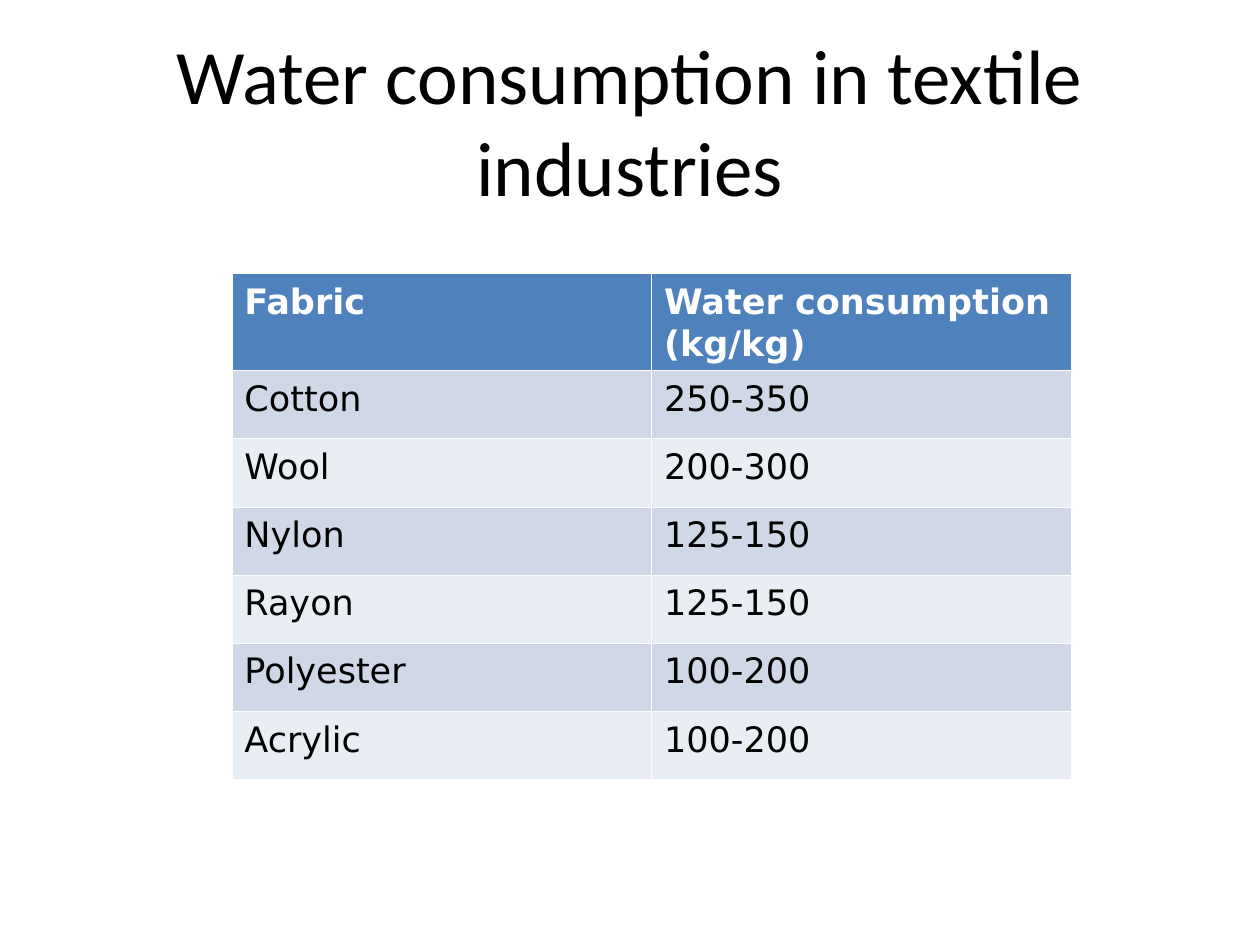
from dataclasses import dataclass

from lxml.etree import SubElement
from pptx import Presentation
from pptx.dml.color import RGBColor
from pptx.enum.text import PP_ALIGN
from pptx.oxml.ns import qn
from pptx.util import Inches, Pt


@dataclass(frozen=True)
class Theme:
    head_font: str = "Calibri"
    body_font: str = "DejaVu Sans"
    head_size: float = 44
    body_size: float = 20
    head_lead: float = 52.5
    body_lead: float = 24.3
    black: str = "000000"
    white: str = "FFFFFF"
    blue: str = "4F81BD"
    bands: tuple = ("D0D8E8", "E9EDF4")


THEME = Theme()
TITLE = "Water consumption in textile\vindustries"
ROWS = [
    ("Fabric", "Water consumption (kg/kg)"),
    ("Cotton", "250-350"),
    ("Wool", "200-300"),
    ("Nylon", "125-150"),
    ("Rayon", "125-150"),
    ("Polyester", "100-200"),
    ("Acrylic", "100-200"),
]


def style(para, font, size, lead, color, bold=False):
    para.line_spacing = Pt(lead)
    for run in para.runs:
        run.font.name = font
        run.font.size = Pt(size)
        run.font.bold = bold
        run.font.color.rgb = RGBColor.from_string(color)


def add_title(slide, left, top, width, height):
    box = slide.shapes.add_textbox(left, top, width, height)
    frame = box.text_frame
    frame.word_wrap = True
    frame.margin_left = frame.margin_right = 0
    frame.margin_top = frame.margin_bottom = 0
    frame.text = TITLE
    para = frame.paragraphs[0]
    para.alignment = PP_ALIGN.CENTER
    style(para, THEME.head_font, THEME.head_size, THEME.head_lead, THEME.black)


def add_edges(cell):
    """Draw a thin white line on all four sides of the cell."""
    props = cell._tc.get_or_add_tcPr()
    for side in ("a:lnL", "a:lnR", "a:lnT", "a:lnB"):
        line = SubElement(props, qn(side), w=str(Pt(0.25)))
        fill = SubElement(line, qn("a:solidFill"))
        SubElement(fill, qn("a:srgbClr"), val=THEME.white)


def fill_cell(cell, text, row):
    head = row == 0
    cell.margin_left = Inches(0.1)
    cell.margin_top = Inches(0.05)
    cell.margin_right = cell.margin_bottom = 0
    add_edges(cell)
    cell.fill.solid()
    color = THEME.blue if head else THEME.bands[(row - 1) % 2]
    cell.fill.fore_color.rgb = RGBColor.from_string(color)
    cell.text_frame.text = text
    style(cell.text_frame.paragraphs[0], THEME.body_font, THEME.body_size,
          THEME.body_lead, THEME.white if head else THEME.black, head)


def add_grid(slide, left, top, width, height):
    count = len(ROWS)
    table = slide.shapes.add_table(
        count, len(ROWS[0]), left, top, width, height).table
    first = Inches(0.77)
    for r, row in enumerate(ROWS):
        table.rows[r].height = first if r == 0 else (height - first) // (count - 1)
        for c, text in enumerate(row):
            fill_cell(table.cell(r, c), text, r)


def main():
    deck = Presentation()
    deck.slide_width, deck.slide_height = Inches(10), Inches(7.5)
    slide = deck.slides.add_slide(deck.slide_layouts[6])
    add_title(slide, Inches(1.3), Inches(0.22), Inches(7.4), Inches(1.46))
    add_grid(slide, Inches(1.84), Inches(2.17), Inches(6.66), Inches(4.02))
    deck.save("out.pptx")


if __name__ == "__main__":
    main()
